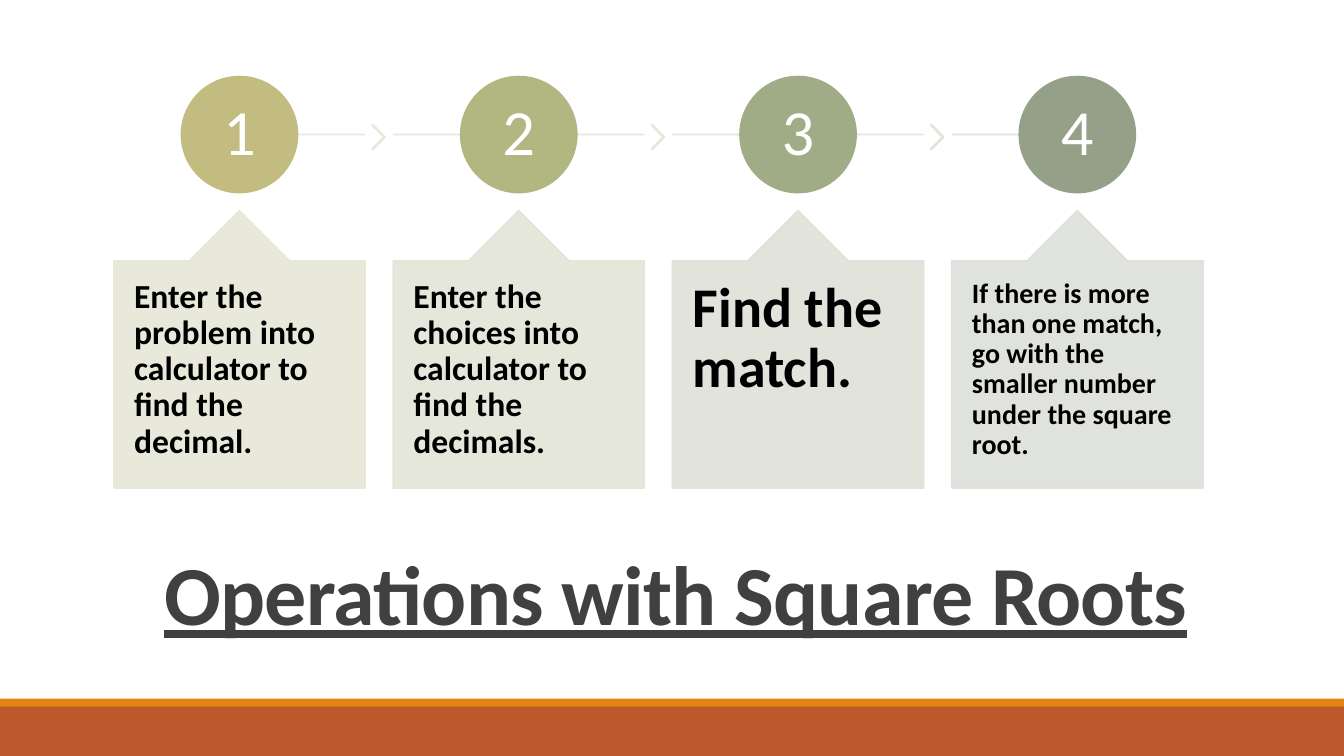
from lxml import etree
from pptx import Presentation
from pptx.dml.color import RGBColor
from pptx.enum.shapes import MSO_CONNECTOR as CONNECTOR, MSO_SHAPE as SHAPE
from pptx.enum.text import MSO_ANCHOR as ANCHOR, MSO_AUTO_SIZE as AUTO_SIZE, PP_ALIGN as ALIGN
from pptx.oxml.ns import qn
from pptx.util import Inches, Pt

COLORS = {"white": "FFFFFF", "black": "000000", "title": "404040",
          "stripe": "E48312", "base": "BD582C"}
STEPS = [
    {"text": "Enter the problem into calculator to find the decimal.", "size": 24,
     "circle": "C2BC80", "callout": "E7E7D8", "track": "E9E7D8", "arrow": "E8E7D8"},
    {"text": "Enter the choices into calculator to find the decimals.", "size": 24,
     "circle": "B2B782", "callout": "E3E5D8", "track": "E6E7D8", "arrow": "E4E6D8"},
    {"text": "Find the match.", "size": 40,
     "circle": "A0AC85", "callout": "DFE2D9", "track": "E1E4D9", "arrow": "E0E3D9"},
    {"text": "If there is more than one match, go with the smaller number under the square root.",
     "size": 20, "circle": "94A088", "callout": "DCDFDA", "track": "DEE1D9", "arrow": None},
]
CARD_WIDTH = 2.49
CARD_STEP = 2.77
CIRCLE_SIZE = 1.15


def write_text(shape, text, size, color, bold=False, underline=False, align=ALIGN.LEFT,
               anchor=ANCHOR.TOP, insets=(0, 0), line_spacing=0.9, tracking=None):
    """Fill a shape with one formatted paragraph."""
    frame = shape.text_frame
    frame.word_wrap = True
    frame.auto_size = AUTO_SIZE.NONE
    frame.vertical_anchor = anchor
    frame.margin_left = frame.margin_right = Inches(insets[0])
    frame.margin_top = frame.margin_bottom = Inches(insets[1])
    paragraph = frame.paragraphs[0]
    paragraph.alignment = align
    paragraph.line_spacing = line_spacing
    run = paragraph.add_run()
    run.text = text
    font = run.font
    font.name, font.size = "Calibri", Pt(size)
    font.bold, font.underline = bold, underline
    font.color.rgb = RGBColor.from_string(color)
    if tracking is not None:
        font._element.set("spc", str(int(tracking * 100)))


def set_opacity(shape, percent):
    """Make every colour of a shape partly transparent."""
    for color in shape._element.spPr.iter(qn("a:srgbClr")):
        etree.SubElement(color, qn("a:alpha")).set("val", str(percent * 1000))


def add_block(slide, kind, box, color, outlined=True, opacity=100, adjustments=()):
    """Add a preset shape in one colour."""
    shape = slide.shapes.add_shape(kind, *map(Inches, box))
    shape.shadow.inherit = False
    for index, value in enumerate(adjustments):
        shape.adjustments[index] = value
    shape.fill.solid()
    shape.fill.fore_color.rgb = RGBColor.from_string(color)
    if outlined:
        shape.line.color.rgb = RGBColor.from_string(color)
        shape.line.width = Pt(1.25)
    else:
        shape.line.fill.background()
    if opacity < 100:
        set_opacity(shape, opacity)
    return shape


def add_track(slide, start, end, y, color):
    """Add a horizontal line between two steps."""
    track = slide.shapes.add_connector(CONNECTOR.STRAIGHT, *map(Inches, (start, y, end, y)))
    track.line.color.rgb = RGBColor.from_string(color)
    track.line.width = Pt(1.25)
    etree.SubElement(track._element.spPr, qn("a:effectLst"))
    set_opacity(track, 90)


def add_step(slide, left, top, number, step):
    """Add a numbered circle with its track, arrow and callout."""
    center, right = left + CARD_WIDTH / 2, left + CARD_WIDTH
    track_y = top + CIRCLE_SIZE / 2
    add_track(slide, center if number == 1 else left,
              center if number == len(STEPS) else right, track_y, step["track"])
    if step["arrow"]:
        add_block(slide, SHAPE.CHEVRON, (right + 0.07, top + 0.48, 0.13, 0.24),
                  step["arrow"], opacity=90, adjustments=[0.9])
    circle = add_block(slide, SHAPE.OVAL,
                       (center - CIRCLE_SIZE / 2, top, CIRCLE_SIZE, CIRCLE_SIZE), step["circle"])
    write_text(circle, str(number), 46, COLORS["white"], align=ALIGN.CENTER,
               anchor=ANCHOR.MIDDLE, insets=(0.04, 0.04))
    callout = add_block(slide, SHAPE.UP_ARROW_CALLOUT, (left, top + 1.33, CARD_WIDTH, 2.75),
                        step["callout"], opacity=90, adjustments=[0.5, 0.2, 0.2, 1])
    write_text(callout, step["text"], step["size"], COLORS["black"], bold=True,
               insets=(0.2, 0.18))


def add_process(slide, left, top):
    """Lay out the steps from left to right."""
    for index, step in enumerate(STEPS):
        add_step(slide, left + index * CARD_STEP, top, index + 1, step)


def add_footer_band(slide, left, top, width):
    """Add the two colour bars along the bottom edge."""
    add_block(slide, SHAPE.RECTANGLE, (left, top + 0.07, width, 0.5), COLORS["base"],
              outlined=False)
    add_block(slide, SHAPE.RECTANGLE, (left, top, width, 0.08), COLORS["stripe"],
              outlined=False)


def place_title(slide, left, top, width, height):
    """Move and format the title placeholder."""
    title = slide.shapes.title
    title.left, title.top = Inches(left), Inches(top)
    title.width, title.height = Inches(width), Inches(height)
    write_text(title, "Operations with Square Roots", 60, COLORS["title"], bold=True,
               underline=True, align=ALIGN.CENTER, anchor=ANCHOR.MIDDLE,
               insets=(0.1, 0.05), line_spacing=0.85, tracking=-0.5)


def main():
    """Build and save the slide."""
    deck = Presentation()
    deck.slide_width, deck.slide_height = Inches(13.33), Inches(7.5)
    slide = deck.slides.add_slide(deck.slide_layouts[5])
    slide.background.fill.solid()
    slide.background.fill.fore_color.rgb = RGBColor.from_string(COLORS["white"])
    add_footer_band(slide, 0, 6.93, 13.33)
    place_title(slide, 1.2, 5.3, 11, 1.3)
    add_process(slide, 1.13, 0.76)
    deck.save("out.pptx")


if __name__ == "__main__":
    main()
